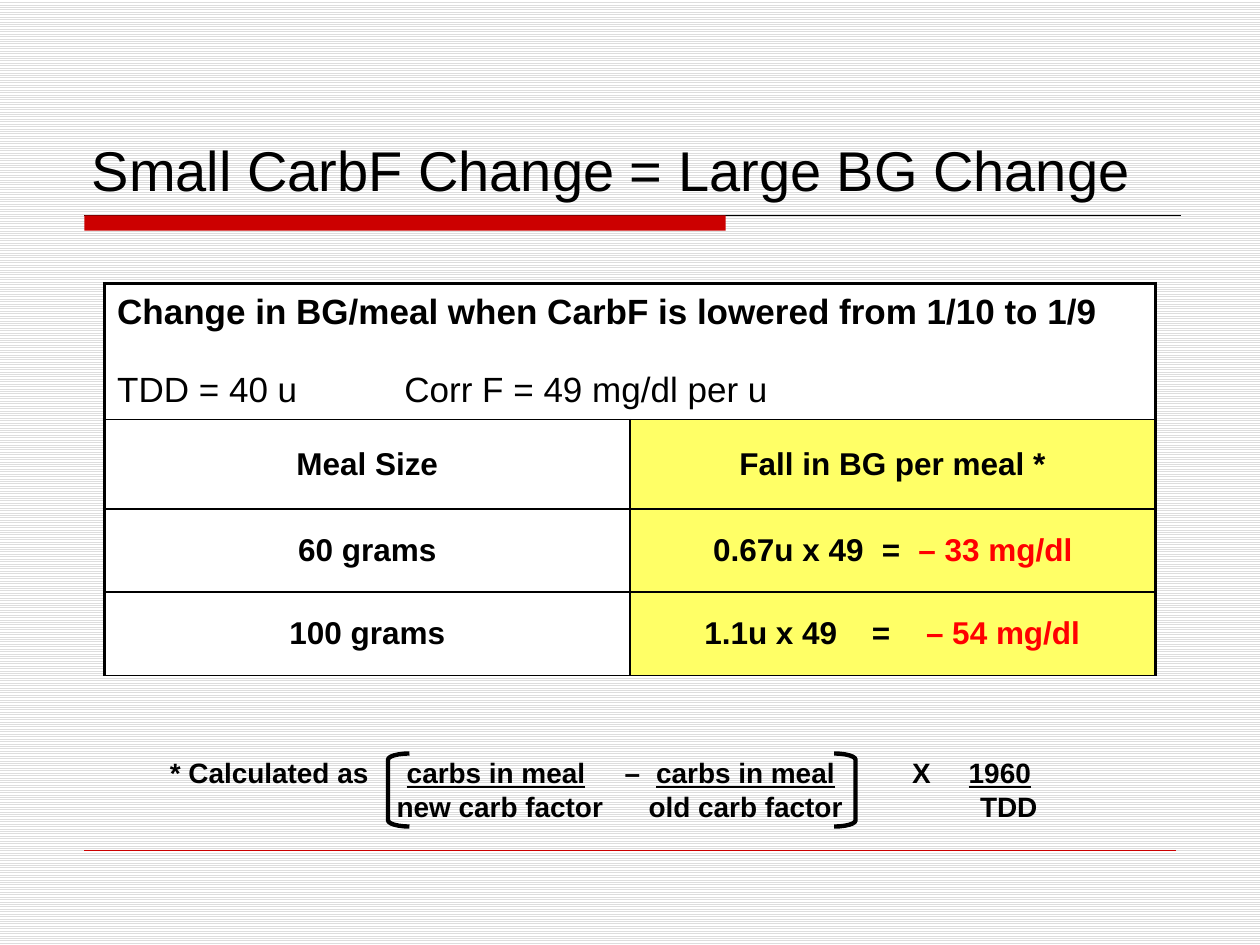
from lxml import etree
from pptx import Presentation
from pptx.dml.color import RGBColor
from pptx.enum.dml import MSO_PATTERN as PATTERN
from pptx.enum.shapes import MSO_CONNECTOR as CONNECTOR, MSO_SHAPE as SHAPE
from pptx.enum.text import MSO_ANCHOR as ANCHOR, PP_ALIGN as ALIGN
from pptx.oxml import parse_xml
from pptx.oxml.ns import nsdecls, qn
from pptx.util import Inches, Pt

BLACK, WHITE, RED, YELLOW = "000000", "FFFFFF", "CC0000", "FFFF66"
LOSS_RED = "FF0000"


def color(hex_string):
    return RGBColor.from_string(hex_string)


def write(paragraph, *pieces, size, bold=True, align=ALIGN.LEFT, tabs=()):
    """Fill a paragraph; a piece is a string or (string, {font settings}); tabs are in inches."""
    if tabs:
        tab_list = etree.SubElement(paragraph._p.get_or_add_pPr(), qn("a:tabLst"))
        for position in tabs:
            etree.SubElement(tab_list, qn("a:tab"), pos=str(Inches(position)), algn="l")
    paragraph.alignment = align
    for piece in pieces:
        text, changes = (piece, {}) if isinstance(piece, str) else piece
        run = paragraph.add_run()
        run.text = text
        run.font.name = "Arial"
        run.font.size = Pt(size)
        run.font.bold = bold
        run.font.underline = changes.get("underline", False)
        run.font.color.rgb = color(changes.get("ink", BLACK))


presentation = Presentation()
presentation.slide_width, presentation.slide_height = Inches(10), Inches(7.5)
slide = presentation.slides.add_slide(presentation.slide_layouts[6])
shapes = slide.shapes

# Striped background
background = slide.background.fill
background.patterned()
background.pattern = PATTERN.LIGHT_HORIZONTAL
background.fore_color.rgb = color("DDDDDD")
background.back_color.rgb = color(WHITE)

# Rules under the title and above the footer
for left, right, top, ink, width in [
    (0.67, 9.37, 1.71, BLACK, 0.75),
    (0.67, 9.33, 6.75, RED, 0.25),
]:
    rule = shapes.add_connector(
        CONNECTOR.STRAIGHT, Inches(left), Inches(top), Inches(right), Inches(top))
    rule.line.color.rgb = color(ink)
    rule.line.width = Pt(width)
    etree.SubElement(rule._element.spPr, qn("a:effectLst"))

title_bar = shapes.add_shape(
    SHAPE.RECTANGLE, Inches(0.67), Inches(1.71), Inches(5.09), Inches(0.12))
title_bar.shadow.inherit = False
title_bar.fill.solid()
title_bar.fill.fore_color.rgb = color(RED)
title_bar.line.fill.background()

# Title
title = shapes.add_textbox(Inches(0.63), Inches(0.33), Inches(9.2), Inches(1.33)).text_frame
title.word_wrap = True
title.vertical_anchor = ANCHOR.BOTTOM
write(title.paragraphs[0], "Small CarbF Change = Large BG Change", size=32, bold=False)

# Table
row_heights = [1.08, 0.71, 0.66, 0.66]
table = shapes.add_table(
    4, 2, Inches(0.83), Inches(2.25), Inches(8.34), Inches(sum(row_heights))).table
table.first_row = table.horz_banding = False
for column in table.columns:
    column.width = Inches(4.17)
for row, height in zip(table.rows, row_heights):
    row.height = Inches(height)
table.cell(0, 0).merge(table.cell(0, 1))

for row_index in range(4):
    for column_index in range(2):
        cell = table.cell(row_index, column_index)
        cell.vertical_anchor = ANCHOR.MIDDLE
        outer_right = column_index == 1 or cell.is_merge_origin
        borders = {
            "lnL": 2.25 if column_index == 0 else 1,
            "lnR": 2.25 if outer_right else 1,
            "lnT": 2.25 if row_index == 0 else 1,
            "lnB": 1,
        }
        for tag, width in borders.items():
            cell._tc.get_or_add_tcPr().append(parse_xml(
                f'<a:{tag} {nsdecls("a")} w="{Pt(width)}"><a:solidFill>'
                f'<a:srgbClr val="{BLACK}"/></a:solidFill></a:{tag}>'))
        cell.fill.solid()
        cell.fill.fore_color.rgb = color(YELLOW if row_index and column_index else WHITE)

heading = table.cell(0, 0).text_frame
write(heading.paragraphs[0],
      "Change in BG/meal when CarbF is lowered from 1/10 to 1/9", size=20)
factors = heading.add_paragraph()
write(factors, "TDD = 40 u\tCorr F = 49 mg/dl per u", size=20, bold=False, tabs=[2.28])
factors.space_before = Pt(22)

for row_index, column_index, text in [
    (1, 0, "Meal Size"), (1, 1, "Fall in BG per meal *"),
    (2, 0, "60 grams"), (3, 0, "100 grams"),
]:
    write(table.cell(row_index, column_index).text_frame.paragraphs[0], text,
          size=18, align=ALIGN.CENTER)

for row_index, dose, loss, indent, tabs in [
    (2, "0.67u x 49", "– 33 mg/dl", 0.66, [1.34, 1.63]),
    (3, "1.1u x 49", "– 54 mg/dl", 0.59, [1.33, 1.76]),
]:
    cell = table.cell(row_index, 1)
    cell.margin_left = Inches(indent)
    write(cell.text_frame.paragraphs[0], f"{dose}\t=\t", (loss, {"ink": LOSS_RED}),
          size=18, tabs=tabs)

# Formula
formula = shapes.add_textbox(Inches(1.25), Inches(5.95), Inches(8.5), Inches(0.64)).text_frame
formula.word_wrap = True
underlined = {"underline": True}
write(formula.paragraphs[0], "* Calculated as\t", ("carbs in meal", underlined), "\t–\t",
      ("carbs in meal", underlined), "\tX\t", ("1960", underlined),
      size=16, tabs=[1.88, 3.61, 3.86, 5.89, 6.34])
write(formula.add_paragraph(), "\tnew carb factor\told carb factor\tTDD",
      size=16, tabs=[1.8, 3.8, 6.43])

for left, rotation in [(3.08, 0), (6.62, 180)]:
    bracket = shapes.add_shape(
        SHAPE.LEFT_BRACKET, Inches(left), Inches(5.98), Inches(0.17), Inches(0.58))
    bracket.rotation = rotation
    bracket.adjustments[0] = 0.29
    bracket.shadow.inherit = False
    bracket.fill.background()
    bracket.line.color.rgb = color(BLACK)
    bracket.line.width = Pt(2.5)

presentation.save("out.pptx")
